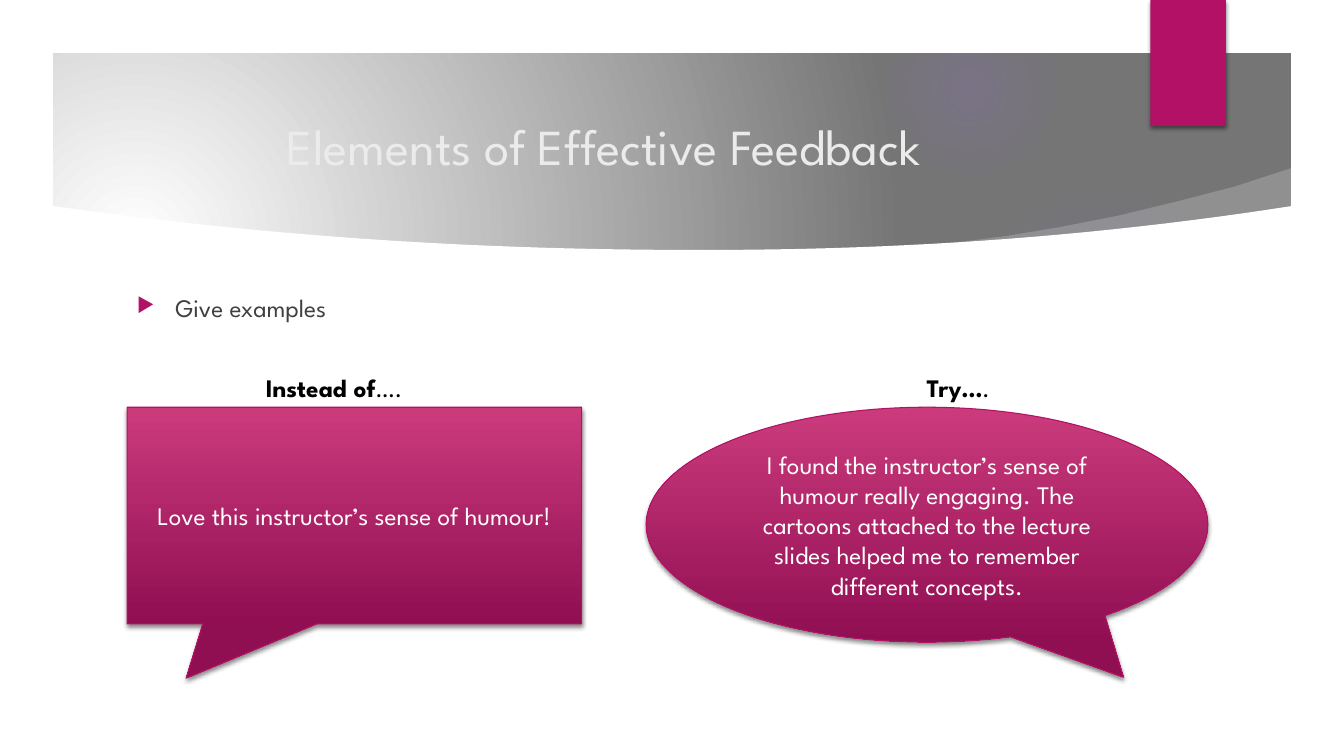
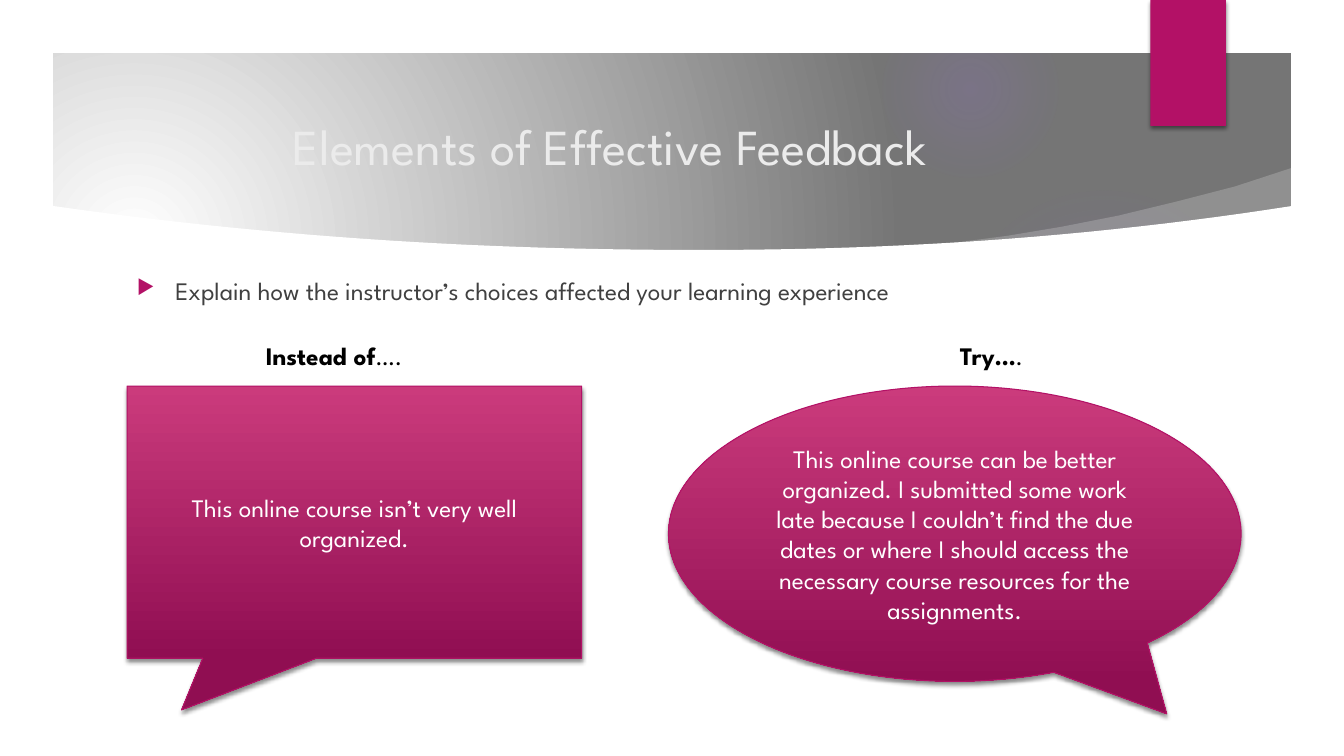
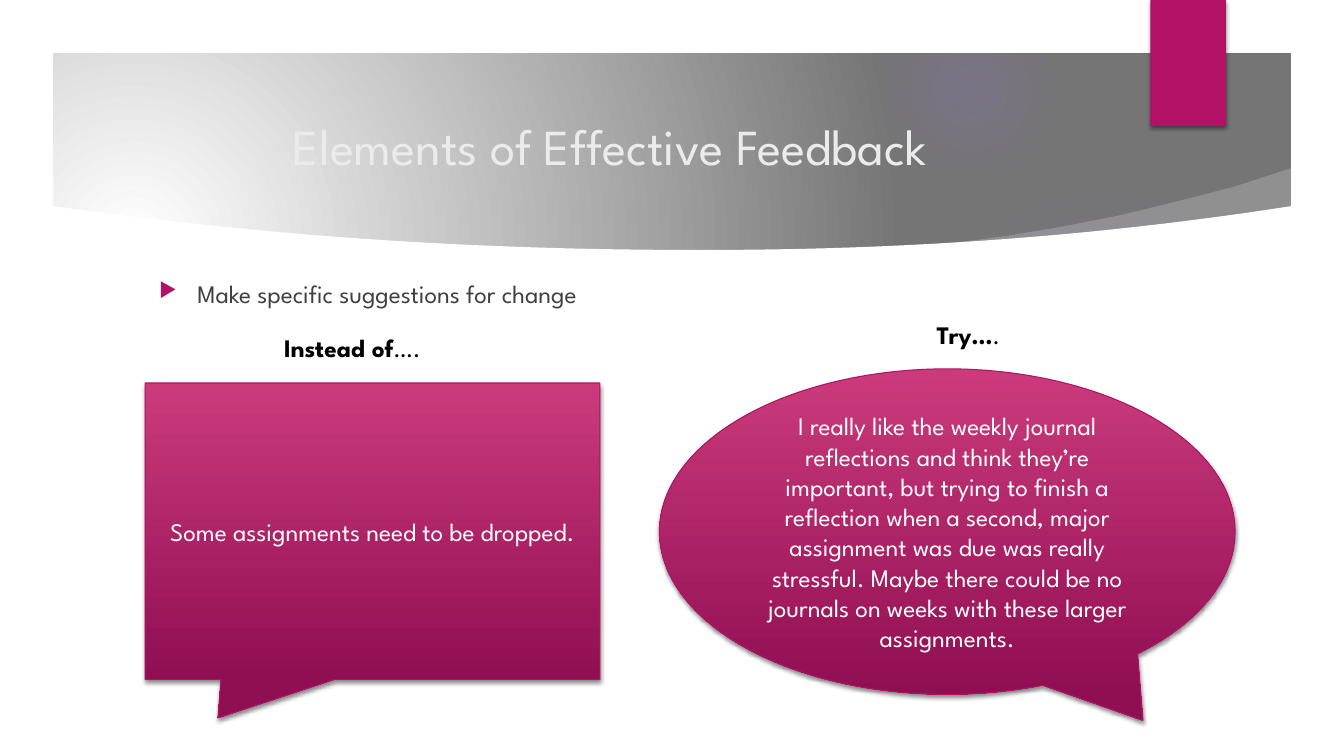
from dataclasses import dataclass

from pptx import Presentation
from pptx.dml.color import RGBColor
from pptx.enum.shapes import MSO_SHAPE
from pptx.enum.text import MSO_ANCHOR, PP_ALIGN
from pptx.oxml import parse_xml
from pptx.oxml.ns import nsdecls, qn
from pptx.util import Inches, Pt

FONT = "League Spartan"
WHITE = RGBColor(0xFF, 0xFF, 0xFF)
BLACK = RGBColor(0x00, 0x00, 0x00)
GREY = RGBColor(0x75, 0x75, 0x75)
TITLE_COLOR = RGBColor(0xEB, 0xEB, 0xEB)
BODY_COLOR = RGBColor(0x40, 0x40, 0x40)
MAGENTA = RGBColor(0xB3, 0x11, 0x66)
MAGENTA_LIGHT = RGBColor(0xCB, 0x3B, 0x7C)
MAGENTA_DARK = RGBColor(0x90, 0x0E, 0x52)
VIOLET = RGBColor(0x9B, 0x6B, 0xF2)

WIDTH, HEIGHT = 13.33, 7.5
BAND_LEFT, BAND_RIGHT = 0.5, 12.84
DIRECTION_DOWN = '<a:lin ang="5400000" scaled="0"/>'
SWEEP_POINTS = [
    (12.83, 1.66), (12.25, 1.85), (11.67, 2.0), (11.09, 2.14), (10.53, 2.25),
    (9.99, 2.34), (9.3, 2.43), (9.34, 2.5), (12.89, 2.14),
]


@dataclass(frozen=True)
class Stop:
    position: int
    color: RGBColor
    opacity: int = 100


@dataclass(frozen=True)
class Glow:
    left: float
    top: float
    size: float
    stops: tuple[Stop, ...]


@dataclass(frozen=True)
class Callout:
    preset: MSO_SHAPE
    left: float
    top: float
    width: float
    height: float
    tip: tuple[float, float]
    text: str
    label: tuple[str, str]
    label_left: float
    label_top: float


@dataclass(frozen=True)
class Advice:
    title_left: float
    point_left: float
    point_top: float
    point: str
    callouts: tuple[Callout, Callout]


GLOWS = [
    Glow(9.41, 1.83, 3.08, (Stop(0, VIOLET, 7), Stop(36, VIOLET, 6), Stop(69, VIOLET, 0))),
    Glow(8.75, 0.01, 1.75, (Stop(0, VIOLET, 14), Stop(36, VIOLET, 7), Stop(73, VIOLET, 0))),
]


def instead_of(left, top, height, tip, text, label_top) -> Callout:
    return Callout(MSO_SHAPE.RECTANGULAR_CALLOUT, left, top, 4.51, height, tip, text,
                   ("Instead of", "…."), left + 1.07, label_top)


def try_this(left, top, width, height, tip, text, label_left, label_top) -> Callout:
    return Callout(MSO_SHAPE.OVAL_CALLOUT, left, top, width, height, tip, text,
                   ("Try…", "."), label_left, label_top)


ADVICE = [
    Advice(1.2, 1.26, 2.85, "Give examples", (
        instead_of(1.26, 4.04, 2.15, (-0.37, 0.75),
                   "Love this instructor’s sense of humour!", 3.64),
        try_this(6.41, 4.04, 5.57, 2.33, (0.35, 0.65),
                 "I found the instructor’s sense of humour really engaging. The cartoons "
                 "attached to the lecture slides helped me to remember different concepts.",
                 8.52, 3.64),
    )),
    Advice(1.26, 1.26, 2.68,
           "Explain how the instructor’s choices affected your learning experience", (
        instead_of(1.26, 3.83, 2.7, (-0.38, 0.69),
                   "This online course isn’t very well organized.", 3.33),
        try_this(6.63, 3.83, 5.68, 2.93, (0.37, 0.61),
                 "This online course can be better organized. I submitted some work late "
                 "because I couldn’t find the due dates or where I should access the "
                 "necessary course resources for the assignments.",
                 8.85, 3.33),
    )),
    Advice(1.26, 1.48, 2.71, "Make specific suggestions for change", (
        instead_of(1.44, 3.8, 2.94, (-0.34, 0.63),
                   "Some assignments need to be dropped.", 3.25),
        try_this(6.54, 3.66, 5.71, 3.23, (0.34, 0.58),
                 "I really like the weekly journal reflections and think they’re important, "
                 "but trying to finish a reflection when a second, major assignment was due "
                 "was really stressful. Maybe there could be no journals on weeks with "
                 "these larger assignments.",
                 8.62, 3.12),
    )),
]


# Fills and effects
def circle_from(left: int, top: int, right: int, bottom: int) -> str:
    return (f'<a:path path="circle"><a:fillToRect l="{left}000" t="{top}000" '
            f'r="{right}000" b="{bottom}000"/></a:path>')


def set_gradient(fill, properties, stops, direction: str) -> None:
    fill.solid()
    stop_xml = "".join(
        f'<a:gs pos="{stop.position * 1000}"><a:srgbClr val="{stop.color}">'
        f'<a:alpha val="{stop.opacity * 1000}"/></a:srgbClr></a:gs>' for stop in stops)
    gradient = parse_xml(f'<a:gradFill {nsdecls("a")} rotWithShape="1">'
                         f'<a:gsLst>{stop_xml}</a:gsLst>{direction}</a:gradFill>')
    properties.replace(properties.find(qn("a:solidFill")), gradient)


def set_solid(shape, color: RGBColor, opacity: int = 100) -> None:
    shape.fill.solid()
    shape.fill.fore_color.rgb = color
    if opacity < 100:
        color_node = shape.element.spPr.find(qn("a:solidFill"))[0]
        color_node.append(parse_xml(f'<a:alpha {nsdecls("a")} val="{opacity * 1000}"/>'))


def add_shadow(shape) -> None:
    effects = shape.element.spPr.find(qn("a:effectLst"))
    effects.append(parse_xml(
        f'<a:outerShdw {nsdecls("a")} blurRad="38100" dist="25400" dir="5400000" '
        f'rotWithShape="0"><a:srgbClr val="{BLACK}"><a:alpha val="45000"/></a:srgbClr>'
        '</a:outerShdw>'))


# Shapes and text
def add_plain_shape(page, preset, left, top, width, height):
    shape = page.shapes.add_shape(preset, Inches(left), Inches(top),
                                  Inches(width), Inches(height))
    shape.shadow.inherit = False
    shape.line.fill.background()
    return shape


def add_outline(page, points, color: RGBColor, opacity: int = 100) -> None:
    corners = [(Inches(x), Inches(y)) for x, y in points]
    builder = page.shapes.build_freeform(*corners[0])
    builder.add_line_segments(corners[1:])
    shape = builder.convert_to_shape()
    shape.shadow.inherit = False
    shape.line.fill.background()
    set_solid(shape, color, opacity)


def style_font(font, size: int, color: RGBColor, bold: bool = False) -> None:
    font.name = FONT
    font.size = Pt(size)
    font.color.rgb = color
    font.bold = bold


def add_text_box(page, left, top, width, height):
    box = page.shapes.add_textbox(Inches(left), Inches(top), Inches(width), Inches(height))
    box.text_frame.word_wrap = True
    return box.text_frame


# Parts of every slide
def add_banner(page) -> None:
    background = page.background.fill
    background.solid()
    set_gradient(background, page.element.find(".//" + qn("p:bgPr")),
                 (Stop(0, WHITE), Stop(100, GREY)), circle_from(45, 65, 125, 100))
    for glow in GLOWS:
        shape = add_plain_shape(page, MSO_SHAPE.OVAL, glow.left, glow.top, glow.size, glow.size)
        set_gradient(shape.fill, shape.element.spPr, glow.stops, circle_from(50, 50, 50, 50))
    add_outline(page, SWEEP_POINTS, WHITE, 20)

    # White sheet whose curved top edge closes the banner
    lowest, steps = 6.95, 48
    curve = []
    for step in range(steps + 1):
        x = BAND_RIGHT - (BAND_RIGHT - BAND_LEFT) * step / steps
        reach = (BAND_RIGHT if x > lowest else BAND_LEFT) - lowest
        curve.append((x, 2.48 - 0.44 * ((x - lowest) / reach) ** 2.1))
    add_outline(page, [(BAND_LEFT, 7), (BAND_RIGHT, 7)] + curve, WHITE)

    frame = add_plain_shape(page, MSO_SHAPE.FRAME, 0, 0, WIDTH, HEIGHT)
    frame.adjustments[0] = 0.07
    set_solid(frame, WHITE)
    ribbon = add_plain_shape(page, MSO_SHAPE.RECTANGLE, 11.41, 0, 0.75, 1.25)
    set_solid(ribbon, MAGENTA)
    add_shadow(ribbon)


def add_title(page, left: float) -> None:
    frame = add_text_box(page, left, 1.06, 9.58, 0.77)
    frame.vertical_anchor = MSO_ANCHOR.MIDDLE
    frame.text = "Elements of Effective Feedback"
    para = frame.paragraphs[0]
    para.alignment = PP_ALIGN.CENTER
    style_font(para.runs[0].font, 36, TITLE_COLOR)


def add_point(page, advice: Advice) -> None:
    frame = add_text_box(page, advice.point_left, advice.point_top, 9.65, 0.5)
    frame.text = advice.point
    para = frame.paragraphs[0]
    properties = para._p.get_or_add_pPr()
    properties.set("marL", str(Inches(0.38)))
    properties.set("indent", str(Inches(-0.38)))
    for bullet_xml in (
        f'<a:buClr {nsdecls("a")}><a:srgbClr val="{MAGENTA}"/></a:buClr>',
        f'<a:buSzPct {nsdecls("a")} val="80000"/>',
        f'<a:buChar {nsdecls("a")} char="▶"/>',
    ):
        properties.append(parse_xml(bullet_xml))
    style_font(para.runs[0].font, 18, BODY_COLOR)


def add_callout(page, callout: Callout) -> None:
    shape = add_plain_shape(page, callout.preset, callout.left, callout.top,
                            callout.width, callout.height)
    shape.adjustments[0], shape.adjustments[1] = callout.tip
    set_gradient(shape.fill, shape.element.spPr,
                 (Stop(0, MAGENTA_LIGHT), Stop(100, MAGENTA_DARK)), DIRECTION_DOWN)
    shape.line.color.rgb = MAGENTA
    shape.line.width = Pt(0.75)
    add_shadow(shape)
    frame = shape.text_frame
    frame.word_wrap = True
    frame.vertical_anchor = MSO_ANCHOR.MIDDLE
    frame.text = callout.text
    para = frame.paragraphs[0]
    para.alignment = PP_ALIGN.CENTER
    style_font(para.runs[0].font, 18, WHITE)

    # Label above the callout: bold words, then plain dots
    label = add_text_box(page, callout.label_left, callout.label_top, 1.97, 0.4).paragraphs[0]
    label.alignment = PP_ALIGN.CENTER
    for words, bold in zip(callout.label, (True, False)):
        span = label.add_run()
        span.text = words
        style_font(span.font, 18, BLACK, bold)


def main() -> None:
    deck = Presentation()
    deck.slide_width, deck.slide_height = Inches(WIDTH), Inches(HEIGHT)
    for advice in ADVICE:
        page = deck.slides.add_slide(deck.slide_layouts[6])
        add_banner(page)
        add_title(page, advice.title_left)
        add_point(page, advice)
        for callout in advice.callouts:
            add_callout(page, callout)
    deck.save("out.pptx")


if __name__ == "__main__":
    main()
